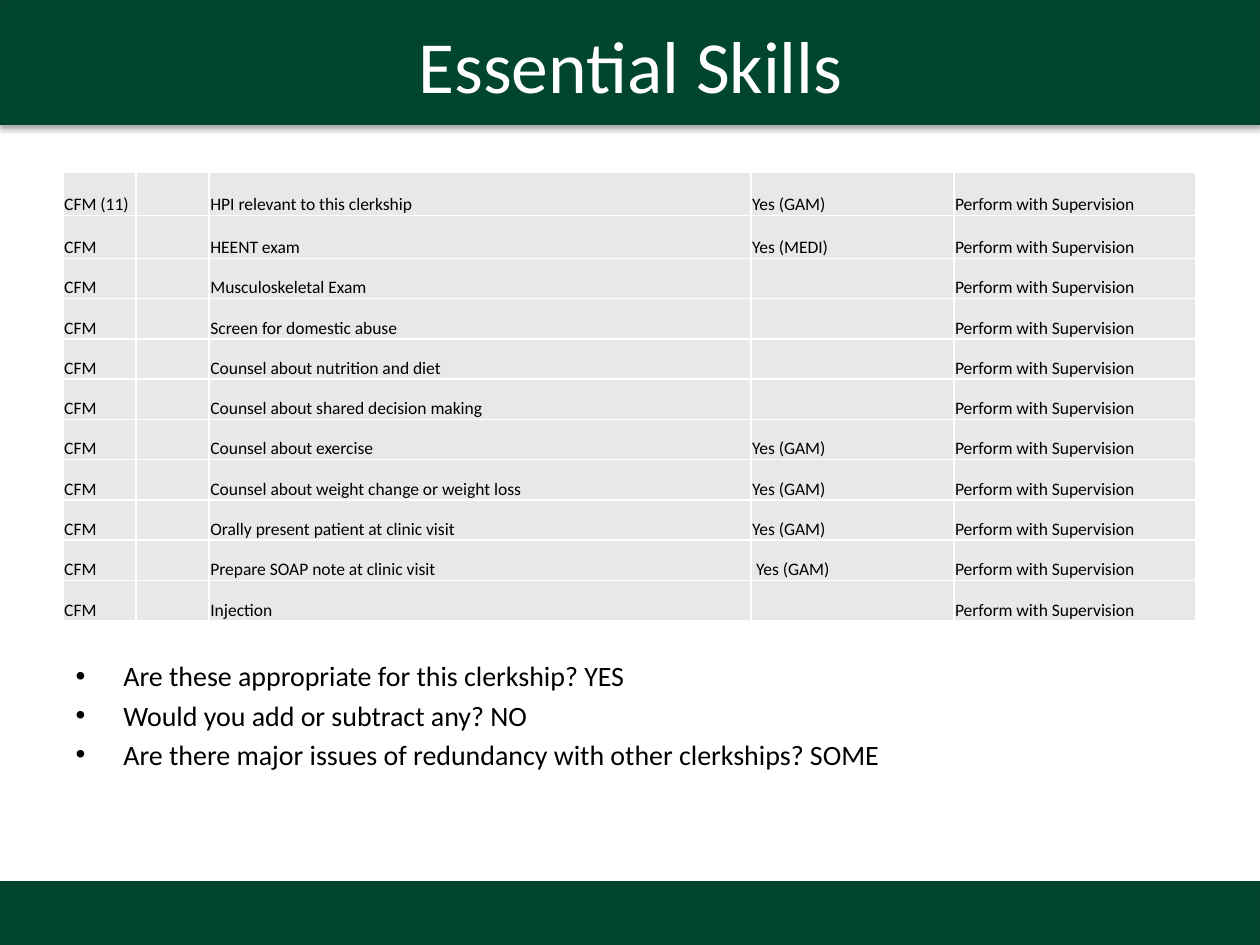
from dataclasses import dataclass

from lxml import etree
from pptx import Presentation
from pptx.dml.color import RGBColor
from pptx.enum import shapes, text
from pptx.oxml import ns
from pptx.util import Inches, Pt


@dataclass(frozen=True)
class Theme:
    font: str = "Calibri"
    green: str = "00462D"
    green_edge: str = "00442D"
    white: str = "FFFFFF"
    black: str = "000000"
    cell: str = "E7E9E8"
    title_size: int = 42
    bullet_size: int = 16
    table_size: int = 10


THEME = Theme()

SUPERVISED = "Perform with Supervision"
# Course, skill, where else it is taught
SKILLS = [
    ("CFM (11)", "HPI relevant to this clerkship", "Yes (GAM)"),
    ("CFM", "HEENT exam", "Yes (MEDI)"),
    ("CFM", "Musculoskeletal Exam", ""),
    ("CFM", "Screen for domestic abuse", ""),
    ("CFM", "Counsel about nutrition and diet", ""),
    ("CFM", "Counsel about shared decision making", ""),
    ("CFM", "Counsel about exercise", "Yes (GAM)"),
    ("CFM", "Counsel about weight change or weight loss", "Yes (GAM)"),
    ("CFM", "Orally present patient at clinic visit", "Yes (GAM)"),
    ("CFM", "Prepare SOAP note at clinic visit", " Yes (GAM)"),
    ("CFM", "Injection", ""),
]
COLUMN_WIDTHS = [0.58, 0.58, 4.3, 1.61, 1.92]
ROW_HEIGHTS = [0.34] * 2 + [0.32] * 9

QUESTIONS = [
    "Are these appropriate for this clerkship? YES",
    "Would you add or subtract any? NO",
    "Are there major issues of redundancy with other clerkships? SOME",
]


def rgb(value):
    return RGBColor.from_string(value)


def add_element(parent, tag, **attributes):
    return etree.SubElement(parent, ns.qn(tag), attributes)


def place(shape, left, top, width, height):
    shape.left, shape.top = Inches(left), Inches(top)
    shape.width, shape.height = Inches(width), Inches(height)


def style_paragraph(paragraph, size, color):
    font = paragraph.font
    font.name, font.size = THEME.font, Pt(size)
    font.color.rgb = rgb(color)


def add_band(slide, top, height):
    """Full-width green band with a soft shadow, behind the other content."""
    band = slide.shapes.add_shape(shapes.MSO_SHAPE.RECTANGLE, 0, Inches(top),
                                  Inches(10), Inches(height))
    band.fill.solid()
    band.fill.fore_color.rgb = rgb(THEME.green)
    band.line.color.rgb = rgb(THEME.green_edge)
    band.line.width = Pt(0.75)
    band.shadow.inherit = False
    effects = band._element.spPr.find(ns.qn("a:effectLst"))
    shadow = add_element(effects, "a:outerShdw", blurRad=str(Pt(3.1)),
                         dist=str(Pt(1.8)), dir="5400000", rotWithShape="0")
    color = add_element(shadow, "a:srgbClr", val=THEME.black)
    add_element(color, "a:alpha", val="35000")
    slide.shapes._spTree.insert(2, band._element)


def fill_title(title, wording):
    place(title, 0.19, 0.01, 9.63, 0.99)
    frame = title.text_frame
    frame.text = wording
    frame.auto_size = text.MSO_AUTO_SIZE.NONE
    frame.vertical_anchor = text.MSO_ANCHOR.MIDDLE
    frame.paragraphs[0].alignment = text.PP_ALIGN.CENTER
    style_paragraph(frame.paragraphs[0], THEME.title_size, THEME.white)


def fill_questions(body, questions):
    place(body, 0.5, 5.18, 8.9, 1.21)
    frame = body.text_frame
    frame.text = "\n".join(questions)
    frame.auto_size = text.MSO_AUTO_SIZE.NONE
    for index, paragraph in enumerate(frame.paragraphs):
        properties = paragraph._p.get_or_add_pPr()
        properties.set("marL", str(Inches(0.38)))
        properties.set("indent", str(Inches(-0.38)))
        add_element(properties, "a:buFont", typeface="Arial")
        add_element(properties, "a:buChar", char="•")
        paragraph.space_before = Pt(3.2 if index else 0)
        style_paragraph(paragraph, THEME.bullet_size, THEME.black)


def style_cell(cell):
    # Borders come before the fill in the cell properties
    properties = cell._tc.get_or_add_tcPr()
    for side in ("a:lnL", "a:lnR", "a:lnT", "a:lnB"):
        border = add_element(properties, side, w=str(Pt(1)))
        line_fill = add_element(border, "a:solidFill")
        add_element(line_fill, "a:srgbClr", val=THEME.white)
    cell.fill.solid()
    cell.fill.fore_color.rgb = rgb(THEME.cell)
    cell.margin_left = cell.margin_right = cell.margin_top = Inches(0.01)
    cell.margin_bottom = 0
    cell.vertical_anchor = text.MSO_ANCHOR.BOTTOM
    style_paragraph(cell.text_frame.paragraphs[0], THEME.table_size, THEME.black)


def add_skills_table(slide, skills):
    frame = slide.shapes.add_table(
        len(skills), len(COLUMN_WIDTHS), Inches(0.5), Inches(1.37),
        Inches(sum(COLUMN_WIDTHS)), Inches(sum(ROW_HEIGHTS)))
    table = frame.table
    table.first_row = table.horz_banding = False
    for column, width in zip(table.columns, COLUMN_WIDTHS):
        column.width = Inches(width)
    for row, height, (course, skill, taught) in zip(table.rows, ROW_HEIGHTS, skills):
        row.height = Inches(height)
        for cell, wording in zip(row.cells, (course, "", skill, taught, SUPERVISED)):
            cell.text = wording
            style_cell(cell)


def main():
    deck = Presentation()
    deck.slide_width, deck.slide_height = Inches(10), Inches(7.5)
    slide = deck.slides.add_slide(deck.slide_layouts[1])

    # Header and footer bands
    add_band(slide, 0, 0.99)
    add_band(slide, 7, 0.5)

    # Title, discussion questions and skills
    fill_title(slide.shapes.title, "Essential Skills")
    fill_questions(slide.placeholders[1], QUESTIONS)
    add_skills_table(slide, SKILLS)

    deck.save("out.pptx")


if __name__ == "__main__":
    main()
